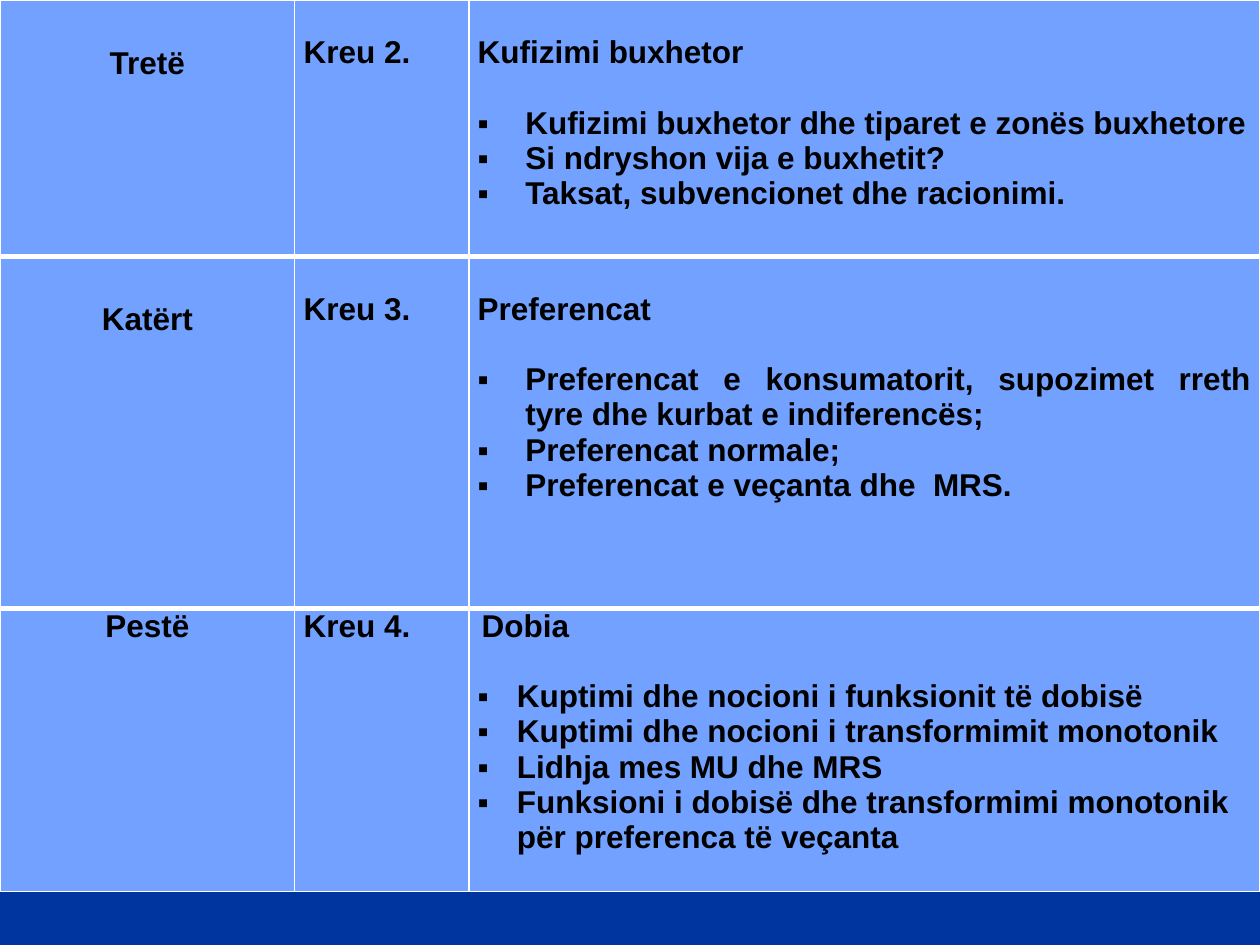
from dataclasses import dataclass

from lxml.etree import SubElement as Sub
from pptx import Presentation
from pptx.dml.color import RGBColor as Rgb
from pptx.enum.text import PP_ALIGN as Align
from pptx.oxml.ns import qn
from pptx.util import Cm, Pt

HUES = {"back": "00349E", "cell": "72A1FF", "line": "FFFFFF", "text": "000000"}
COLS = (5.94, 3.51, 15.95)
SIDE = 0.18
THIN, THICK = 1, 3


@dataclass
class Week:
    name: str
    unit: str
    head: str
    items: tuple[str, ...]
    tall: float
    top: float = 0.71
    drop: float = 0.92
    inset: float = 0
    hang: float = 0.96
    align: Align = Align.JUSTIFY


WEEKS = (
    Week("Tretë", "Kreu 2.", "Kufizimi buxhetor", (
        "Kufizimi buxhetor dhe tiparet e zonës buxhetore",
        "Si ndryshon vija e buxhetit?",
        "Taksat, subvencionet dhe racionimi.",
    ), 5.17),
    Week("Katërt", "Kreu 3.", "Preferencat", (
        "Preferencat e konsumatorit, supozimet rreth tyre dhe kurbat e indiferencës;",
        "Preferencat normale;",
        "Preferencat e veçanta dhe  MRS.",
    ), 7.1),
    Week("Pestë", "Kreu 4.", "Dobia", (
        "Kuptimi dhe nocioni i funksionit të dobisë",
        "Kuptimi dhe nocioni i transformimit monotonik",
        "Lidhja mes MU dhe MRS",
        "Funksioni i dobisë dhe transformimi monotonik për preferenca të veçanta",
    ), 5.7, top=0, drop=0, inset=0.08, hang=0.79, align=Align.LEFT),
)


def hue(name: str) -> Rgb:
    return Rgb.from_string(HUES[name])


def edge(cell, side: str, width: float) -> None:
    line = Sub(cell._tc.get_or_add_tcPr(), qn(f"a:ln{side}"), w=str(Pt(width)))
    Sub(Sub(line, qn("a:solidFill")), qn("a:srgbClr"), val=HUES["line"])


def style(cell, top: float, first: bool, last: bool) -> None:
    widths = {"L": THIN, "R": THIN, "T": THIN if first else THICK,
              "B": THIN if last else THICK}
    for side, width in widths.items():
        edge(cell, side, width)
    cell.fill.solid()
    cell.fill.fore_color.rgb = hue("cell")
    cell.margin_left = cell.margin_right = Cm(SIDE)
    cell.margin_top, cell.margin_bottom = Cm(top), 0


def write(para, text: str, align: Align = Align.LEFT) -> None:
    para.alignment = align
    run = para.add_run()
    run.text = text
    font = run.font
    font.name, font.size, font.bold = "Arial", Pt(18), True
    font.color.rgb = hue("text")


def indent(para, left: float, first: float = 0) -> None:
    props = para._p.get_or_add_pPr()
    props.set("marL", str(Cm(left)))
    props.set("indent", str(Cm(first)))


def bullet(para, hang: float) -> None:
    indent(para, hang, -hang)
    props = para._p.get_or_add_pPr()
    Sub(props, qn("a:buFont"), typeface="Arial")
    Sub(props, qn("a:buChar"), char="▪")


def fill_row(cells, week: Week, first: bool, last: bool) -> None:
    name, unit, theme = cells
    for cell, top in ((name, week.drop), (unit, week.top), (theme, week.top)):
        style(cell, top, first, last)
    write(name.text_frame.paragraphs[0], week.name, Align.CENTER)
    write(unit.text_frame.paragraphs[0], week.unit)
    frame = theme.text_frame
    head = frame.paragraphs[0]
    write(head, week.head, Align.JUSTIFY)
    head.space_after = Pt(20)
    indent(head, week.inset)
    for item in week.items:
        para = frame.add_paragraph()
        write(para, item, week.align)
        bullet(para, week.hang)


def main() -> None:
    """Build the course plan slide for weeks three to five."""
    deck = Presentation()
    deck.slide_width, deck.slide_height = Cm(25.4), Cm(19.05)
    slide = deck.slides.add_slide(deck.slide_layouts[6])
    back = slide.background.fill
    back.solid()
    back.fore_color.rgb = hue("back")
    tall = sum(week.tall for week in WEEKS)
    table = slide.shapes.add_table(
        len(WEEKS), len(COLS), 0, 0, Cm(sum(COLS)), Cm(tall)).table
    table.first_row = table.horz_banding = False
    for col, width in zip(table.columns, COLS):
        col.width = Cm(width)
    end = len(WEEKS) - 1
    for i, (row, week) in enumerate(zip(table.rows, WEEKS)):
        row.height = Cm(week.tall)
        fill_row(row.cells, week, i == 0, i == end)
    deck.save("out.pptx")


if __name__ == "__main__":
    main()
